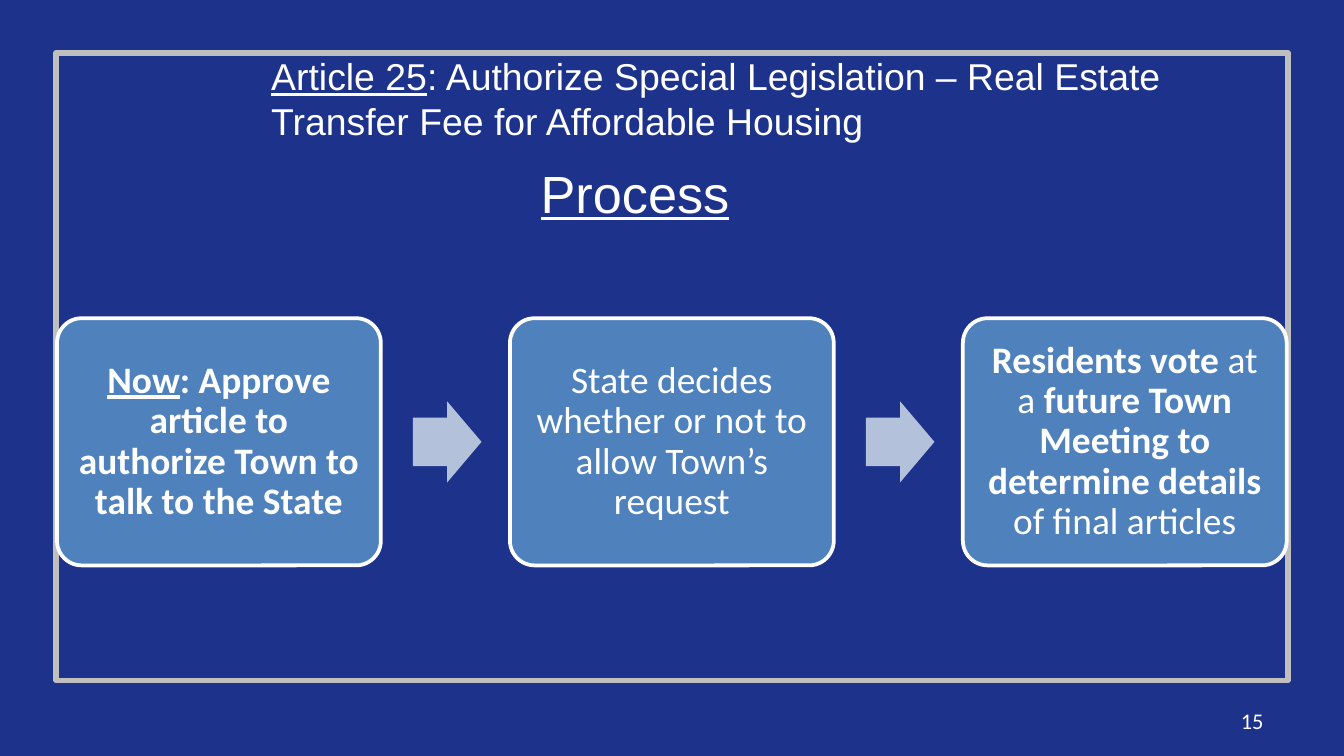
from dataclasses import dataclass
from typing import NamedTuple

from pptx import Presentation
from pptx.dml.color import RGBColor
from pptx.enum.shapes import MSO_SHAPE
from pptx.enum.text import MSO_ANCHOR, PP_ALIGN
from pptx.util import Inches, Pt

WIDTH = Inches(10)
HEIGHT = WIDTH * 9 // 16


@dataclass(frozen=True)
class Theme:
    back: str = "1D328B"
    frame: str = "BFBFBF"
    card: str = "4F81BD"
    arrow: str = "B3C1DB"
    text: str = "FFFFFF"
    head: str = "Arial"
    body: str = "Calibri"
    large: int = 28
    main: int = 20
    small: int = 12


class Box(NamedTuple):
    """Left, top, width and height in percent of the slide."""
    left: float
    top: float
    width: float
    height: float

    def place(self) -> tuple[int, ...]:
        sides = (WIDTH, HEIGHT, WIDTH, HEIGHT)
        return tuple(round(part * side / 100) for part, side in zip(self, sides))


class Part(NamedTuple):
    text: str
    bold: bool = False
    under: bool = False


THEME = Theme()
FRAME = Box(4.17, 7, 91.67, 83)
TITLE = Box(19.2, 7, 75, 11.9)
TOPIC = Box(5.6, 20.4, 83.3, 10.7)
NUMBER = Box(71.7, 92.7, 23.3, 5.3)
CARD = Box(4.24, 42.1, 24.1, 32.7)
PITCH = 33.7
ARROW = Box(30.73, 53.1, 5.1, 10.7)

STEPS = [
    [Part("Now", True, True),
     Part(": Approve article to authorize Town to talk to the State", True)],
    [Part("State decides whether or not to allow Town’s request")],
    [Part("Residents vote ", True), Part("at a "),
     Part("future Town Meeting to determine details ", True),
     Part("of final articles")],
]


def color(code: str) -> RGBColor:
    return RGBColor.from_string(code)


def write(shape, parts: list[Part], font: str, size: int,
          align=PP_ALIGN.LEFT, anchor=MSO_ANCHOR.MIDDLE) -> None:
    frame = shape.text_frame
    frame.word_wrap = True
    frame.vertical_anchor = anchor
    line = frame.paragraphs[0]
    line.alignment = align
    for part in parts:
        run = line.add_run()
        run.text = part.text
        run.font.name, run.font.size = font, Pt(size)
        run.font.bold, run.font.underline = part.bold, part.under
        run.font.color.rgb = color(THEME.text)


def draw(slide, kind, box: Box, fill: str = "", edge: str = "", weight: float = 0):
    shape = slide.shapes.add_shape(kind, *box.place())
    shape.shadow.inherit = False
    if fill:
        shape.fill.solid()
        shape.fill.fore_color.rgb = color(fill)
    else:
        shape.fill.background()
    if edge:
        shape.line.color.rgb = color(edge)
        shape.line.width = Pt(weight)
    else:
        shape.line.fill.background()
    return shape


def label(slide, box: Box, parts: list[Part], font: str, size: int, **how) -> None:
    write(slide.shapes.add_textbox(*box.place()), parts, font, size, **how)


def shift(box: Box, index: int) -> Box:
    """Move a box right to the given column."""
    return box._replace(left=box.left + index * PITCH)


def add_card(slide, box: Box, parts: list[Part]) -> None:
    card = draw(slide, MSO_SHAPE.ROUNDED_RECTANGLE, box, THEME.card, THEME.text, 2)
    card.adjustments[0] = 0.1
    write(card, parts, THEME.body, THEME.main, PP_ALIGN.CENTER)
    frame = card.text_frame
    frame.margin_left = frame.margin_right = Inches(0.08)
    frame.margin_top = frame.margin_bottom = Inches(0.08)
    frame.paragraphs[0].line_spacing = 0.9


def add_arrow(slide, box: Box) -> None:
    arrow = draw(slide, MSO_SHAPE.RIGHT_ARROW, box, THEME.arrow)
    arrow.adjustments[0] = 0.6
    arrow.adjustments[1] = 0.5


def main() -> None:
    deck = Presentation()
    deck.slide_width, deck.slide_height = WIDTH, HEIGHT
    slide = deck.slides.add_slide(deck.slide_layouts[6])
    slide.background.fill.solid()
    slide.background.fill.fore_color.rgb = color(THEME.back)

    draw(slide, MSO_SHAPE.RECTANGLE, FRAME, edge=THEME.frame, weight=3)
    title = [Part("Article 25", under=True),
             Part(": Authorize Special Legislation – Real Estate "
                  "Transfer Fee for Affordable Housing")]
    label(slide, TITLE, title, THEME.head, THEME.main)
    label(slide, TOPIC, [Part("Process", under=True)], THEME.head, THEME.large,
          align=PP_ALIGN.CENTER, anchor=MSO_ANCHOR.TOP)
    label(slide, NUMBER, [Part("15")], THEME.body, THEME.small,
          align=PP_ALIGN.RIGHT)

    for index, parts in enumerate(STEPS):
        add_card(slide, shift(CARD, index), parts)
        if index < len(STEPS) - 1:
            add_arrow(slide, shift(ARROW, index))

    deck.save("out.pptx")


if __name__ == "__main__":
    main()
